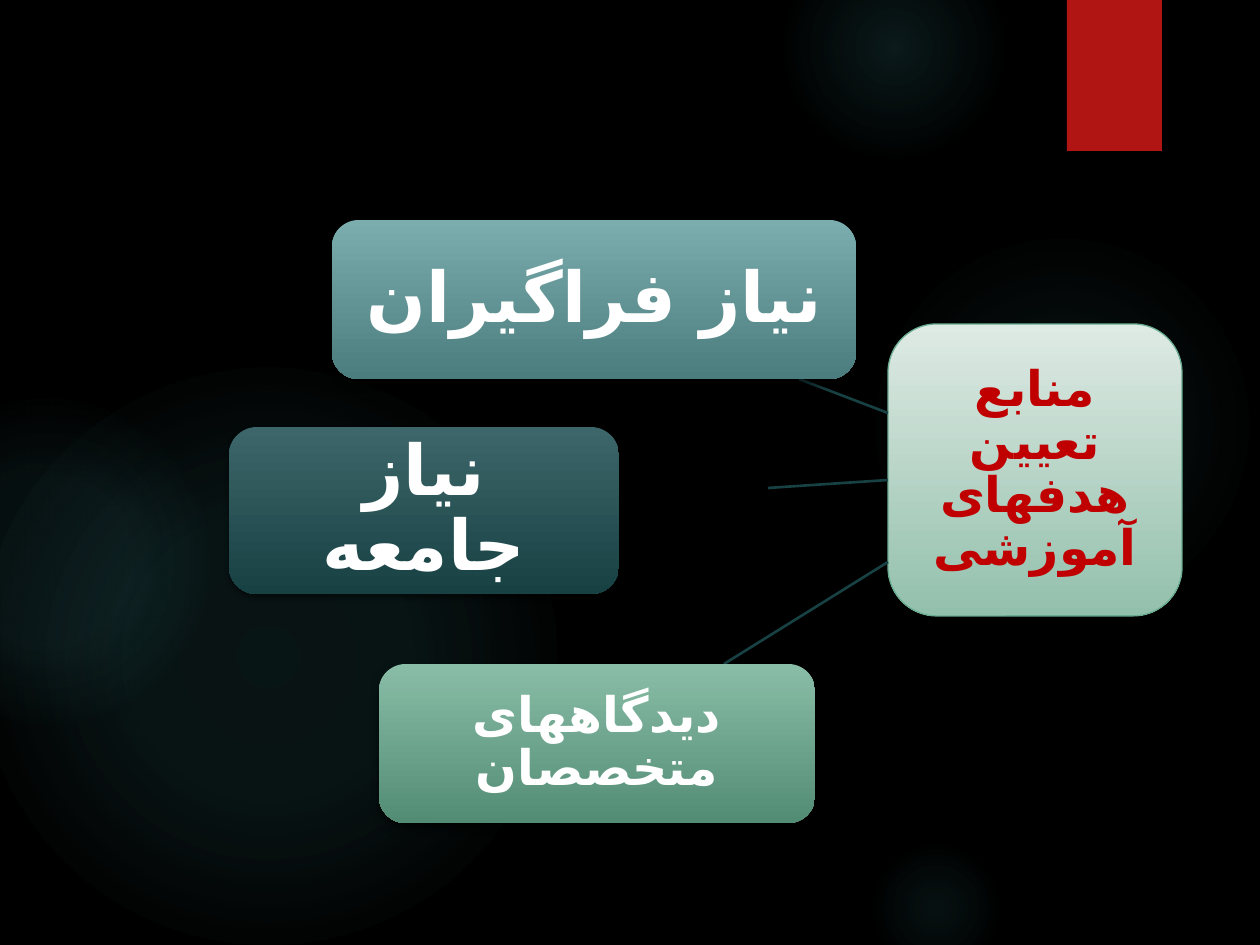
from dataclasses import dataclass

from lxml.etree import SubElement
from pptx import Presentation
from pptx.dml.color import RGBColor
from pptx.enum.shapes import MSO_CONNECTOR, MSO_SHAPE
from pptx.enum.text import MSO_ANCHOR, PP_ALIGN
from pptx.oxml.ns import qn
from pptx.util import Emu, Pt

EMU_PER_PX = 914400 / 126


@dataclass(frozen=True)
class Theme:
    """Colours, type and line widths of the slide."""
    background: str = "000000"
    glow: str = "50B9C1"
    tab: str = "B01513"
    shadow: str = "000000"
    branch: str = "184144"
    topic_edge: str = "6AAC90"
    topic_text: str = "C00000"
    source_text: str = "FFFFFF"
    topic_fill: tuple = ("DEEAE4", "93C0AC")
    learners_fill: tuple = ("7CADAE", "4C7D7E")
    experts_fill: tuple = ("89BDA7", "538C74")
    society_fill: tuple = ("3D666A", "184144")
    persian_font: str = "DejaVu Sans"
    large: int = 40
    medium: int = 28
    branch_width: float = 1.5
    edge_width: float = 0.75


THEME = Theme()
SOFT_SHADOW = (45, 3, 2)
DEEP_SHADOW = (60, 5, 3)


def px(length):
    """Turn pixels into EMU."""
    return Emu(round(length * EMU_PER_PX))


def add_color(parent, color, alpha=100):
    """Append a colour with an opacity in percent."""
    rgb = SubElement(parent, qn("a:srgbClr"), val=color)
    if alpha < 100:
        SubElement(rgb, qn("a:alpha"), val=str(alpha * 1000))


def set_gradient(shape, stops, radial=False):
    """Fill a shape with a vertical or radial gradient of (position, colour, opacity)."""
    shape.fill.background()
    properties = shape._element.spPr
    gradient = SubElement(properties, qn("a:gradFill"), rotWithShape="1")
    properties.replace(properties.find(qn("a:noFill")), gradient)
    stop_list = SubElement(gradient, qn("a:gsLst"))
    for position, color, alpha in stops:
        add_color(SubElement(stop_list, qn("a:gs"), pos=str(position * 1000)), color, alpha)
    if radial:
        centre = SubElement(gradient, qn("a:path"), path="circle")
        SubElement(centre, qn("a:fillToRect"), l="50000", t="50000", r="50000", b="50000")
    else:
        SubElement(gradient, qn("a:lin"), ang="5400000", scaled="0")


def set_shadow(shape, opacity, blur, distance):
    """Cast a shadow straight down, with blur and distance in points."""
    effects = shape._element.spPr.find(qn("a:effectLst"))
    shadow = SubElement(effects, qn("a:outerShdw"), blurRad=str(Pt(blur)), dist=str(Pt(distance)),
                        dir="5400000", algn="ctr", rotWithShape="0")
    add_color(shadow, THEME.shadow, opacity)


def add_plain_shape(slide, kind, left, top, width, height):
    """Add a preset shape without line or shadow."""
    shape = slide.shapes.add_shape(kind, px(left), px(top), px(width), px(height))
    shape.shadow.inherit = False
    shape.line.fill.background()
    return shape


def add_glow(slide, left, top, diameter, stops):
    """Add a soft round light to the background."""
    glow = add_plain_shape(slide, MSO_SHAPE.OVAL, left, top, diameter, diameter)
    set_gradient(glow, [(position, THEME.glow, alpha) for position, alpha in stops], radial=True)


def add_tab(slide, left, top, width, height):
    """Add the red tab at the top edge."""
    tab = add_plain_shape(slide, MSO_SHAPE.RECTANGLE, left, top, width, height)
    tab.fill.solid()
    tab.fill.fore_color.rgb = RGBColor.from_string(THEME.tab)
    set_shadow(tab, *SOFT_SHADOW)


def add_branch(slide, *ends):
    """Add a line from the topic towards a source."""
    branch = slide.shapes.add_connector(MSO_CONNECTOR.STRAIGHT, *map(px, ends))
    branch.line.color.rgb = RGBColor.from_string(THEME.branch)
    branch.line.width = Pt(THEME.branch_width)
    SubElement(branch._element.spPr, qn("a:effectLst"))


def add_card(slide, box, colors, wording, font, size, color, margin):
    """Add a rounded card with centred right-to-left wording."""
    card = add_plain_shape(slide, MSO_SHAPE.ROUNDED_RECTANGLE, *box)
    set_gradient(card, [(0, colors[0], 100), (100, colors[1], 100)])
    frame = card.text_frame
    frame.word_wrap = True
    frame.vertical_anchor = MSO_ANCHOR.MIDDLE
    frame.margin_left = frame.margin_right = frame.margin_top = frame.margin_bottom = px(margin)
    paragraph = frame.paragraphs[0]
    paragraph.alignment = PP_ALIGN.CENTER
    paragraph.line_spacing = 0.9
    paragraph._p.get_or_add_pPr().set("rtl", "1")
    run = paragraph.add_run()
    run.text = wording
    run.font.name = font
    run.font.size = Pt(size)
    run.font.bold = True
    run.font.color.rgb = RGBColor.from_string(color)
    properties = run._r.get_or_add_rPr()
    properties.set("lang", "fa-IR")
    SubElement(properties, qn("a:cs"), typeface=THEME.persian_font)
    return card


def add_topic(slide):
    """Add the outlined topic card."""
    topic = add_card(slide, (888, 324, 294, 292), THEME.topic_fill, "منابع تعیین هدفهای آموزشی",
                     "Calibri", THEME.medium, THEME.topic_text, 10)
    topic.line.color.rgb = RGBColor.from_string(THEME.topic_edge)
    topic.line.width = Pt(THEME.edge_width)


def add_source(slide, branch, box, colors, wording, font, size, margin, shadow):
    """Add a source card and the branch that leads to it."""
    add_branch(slide, *branch)
    card = add_card(slide, box, colors, wording, font, size, THEME.source_text, margin)
    set_shadow(card, *shadow)


def main():
    """Build and save the slide."""
    deck = Presentation()
    deck.slide_width, deck.slide_height = px(1260), px(945)
    slide = deck.slides.add_slide(deck.slide_layouts[6])
    slide.background.fill.solid()
    slide.background.fill.fore_color.rgb = RGBColor.from_string(THEME.background)

    glows = (
        (868, 231, 388, ((0, 7), (36, 6), (69, 0))),
        (784, -63, 220, ((0, 14), (36, 7), (73, 0))),
        (868, 840, 136, ((0, 9), (36, 5), (66, 0))),
        (-21, 368, 577, ((0, 11), (36, 10), (75, 0))),
        (-116, 399, 325, ((0, 8), (36, 8), (72, 0))),
    )
    for glow in glows:
        add_glow(slide, *glow)
    add_tab(slide, 1067, 0, 95, 151)
    add_topic(slide)

    sources = (
        ((888, 413, 799, 379), (332, 220, 524, 159), THEME.learners_fill,
         "نیاز فراگیران", "Times New Roman", THEME.large, 14, DEEP_SHADOW),
        ((888, 562, 724, 664), (379, 664, 436, 159), THEME.experts_fill,
         "دیدگاههای متخصصان", "Times New Roman", THEME.medium, 10, DEEP_SHADOW),
        ((888, 480, 768, 488), (229, 427, 390, 167), THEME.society_fill,
         "نیاز جامعه", "Arial", THEME.large, 14, SOFT_SHADOW),
    )
    for source in sources:
        add_source(slide, *source)
    deck.save("out.pptx")


if __name__ == "__main__":
    main()
